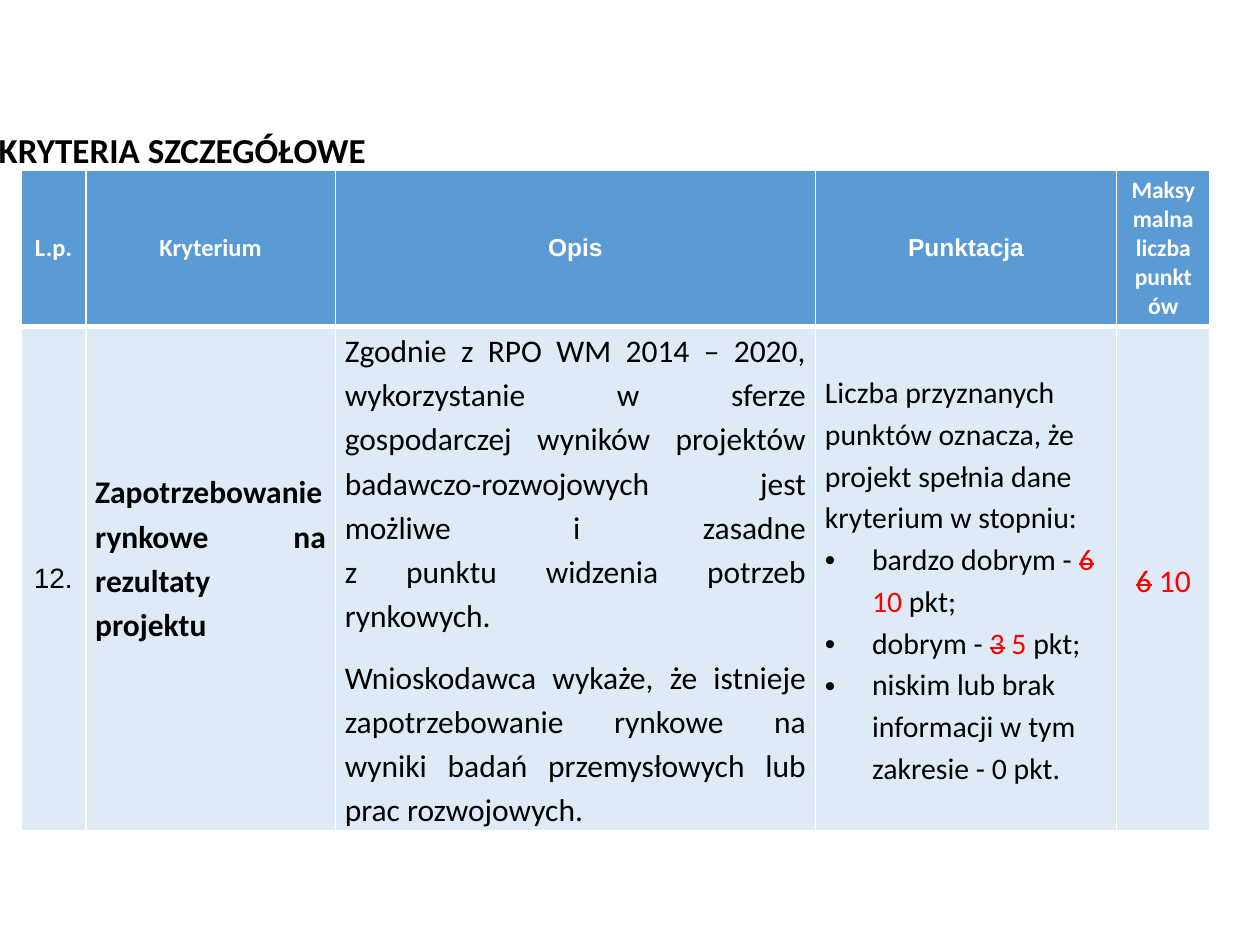
from dataclasses import dataclass
from typing import Optional

from pptx import Presentation
from pptx.dml.color import RGBColor
from pptx.enum.text import MSO_ANCHOR as Anchor, PP_ALIGN as Align
from pptx.oxml.ns import qn
from pptx.util import Cm, Pt
from lxml.etree import SubElement

WHITE, BLACK, RED = "FFFFFF", "000000", "FF0000"
HEADER_FILL, BODY_FILL = "5B9BD5", "DEEBF7"
COLUMN_WIDTHS = (1.3, 5.03, 9.68, 6.07, 1.88)
ROW_HEIGHTS = (3.15, 9.96)
SIDES = ("L", "R", "T", "B")


@dataclass
class Span:
    text: str
    color: str = BLACK
    strike: bool = False


@dataclass
class Para:
    spans: list[Span]
    align: Optional[Align] = None
    after: float = 0
    bullet: bool = False


@dataclass
class Entry:
    paras: list[Para]
    size: float
    font: str = "Calibri"
    bold: bool = False
    spacing: Optional[float] = 1.15
    margins: Optional[tuple[float, float, float, float]] = (0.19, 0, 0.19, 0)


def rgb(color: str) -> RGBColor:
    return RGBColor.from_string(color)


def header(text: str, size: float = 14, font: str = "Calibri") -> Entry:
    return Entry([Para([Span(text, WHITE)], Align.CENTER)], size, font, True, None, None)


def plain(text: str, align: Optional[Align] = None, after: float = 0) -> Para:
    return Para([Span(text)], align, after)


def score(label: str, old: str, new: str) -> Para:
    """Bullet with the old score struck out before the new one."""
    return Para([Span(label + " - "), Span(old, RED, True), Span(" "),
                 Span(new, RED), Span(" pkt;")], bullet=True)


HEADERS = [
    header("L.p."),
    header("Kryterium"),
    header("Opis", font="Arial"),
    header("Punktacja", font="Arial"),
    header("Maksymalna liczba punktów", 13.5),
]
CRITERION = [
    Entry([plain("12.")], 16, "Arial", spacing=None, margins=None),
    Entry([plain("Zapotrzebowanie rynkowe na rezultaty projektu", Align.JUSTIFY)],
          18, bold=True, margins=(0.19, 0, 0.19, 0.89)),
    Entry([
        plain("Zgodnie z RPO WM 2014 – 2020, wykorzystanie w sferze gospodarczej "
              "wyników projektów badawczo-rozwojowych jest możliwe i zasadne\v"
              "z punktu widzenia potrzeb rynkowych.", Align.JUSTIFY, 10),
        plain("Wnioskodawca wykaże, że istnieje zapotrzebowanie rynkowe na wyniki "
              "badań przemysłowych lub prac rozwojowych.", Align.JUSTIFY, 10),
    ], 18),
    Entry([
        plain("Liczba przyznanych punktów oznacza, że projekt spełnia dane "
              "kryterium w stopniu:"),
        score("bardzo dobrym", "6", "10"),
        score("dobrym", "3", "5"),
        Para([Span("niskim lub brak informacji w tym zakresie - 0 pkt.")], bullet=True),
    ], 17),
    Entry([Para([Span("6", RED, True), Span(" 10", RED)], Align.CENTER, 10)], 18),
]


def add_bullet(paragraph) -> None:
    properties = paragraph._p.get_or_add_pPr()
    properties.set("marL", str(Cm(0.95)))
    properties.set("indent", str(-Cm(0.95)))
    SubElement(properties, qn("a:buFont")).set("typeface", "Arial")
    SubElement(properties, qn("a:buChar")).set("char", "•")


def write_para(paragraph, para: Para, entry: Entry) -> None:
    if para.bullet:
        add_bullet(paragraph)
    if para.align is not None:
        paragraph.alignment = para.align
    if entry.spacing:
        paragraph.line_spacing = entry.spacing
    if para.after:
        paragraph.space_after = Pt(para.after)
    if len(para.spans) == 1:
        paragraph.text = para.spans[0].text
        pairs = [(run, para.spans[0]) for run in paragraph.runs]
    else:
        pairs = [(paragraph.add_run(), span) for span in para.spans]
        for run, span in pairs:
            run.text = span.text
    for run, span in pairs:
        run.font.name = entry.font
        run.font.size = Pt(entry.size)
        run.font.bold = entry.bold
        run.font.color.rgb = rgb(span.color)
        if span.strike:
            run._r.get_or_add_rPr().set("strike", "sngStrike")


def add_borders(cell, bottom: float) -> None:
    properties = cell._tc.get_or_add_tcPr()
    for side in SIDES:
        width = bottom if side == "B" else 1
        line = SubElement(properties, qn(f"a:ln{side}"), w=str(Pt(width)))
        fill = SubElement(line, qn("a:solidFill"))
        SubElement(fill, qn("a:srgbClr"), val=WHITE)


def fill_cell(cell, entry: Entry, fill: str, bottom: float) -> None:
    add_borders(cell, bottom)
    cell.fill.solid()
    cell.fill.fore_color.rgb = rgb(fill)
    cell.vertical_anchor = Anchor.MIDDLE
    if entry.margins:
        (cell.margin_left, cell.margin_top,
         cell.margin_right, cell.margin_bottom) = map(Cm, entry.margins)
    for index, para in enumerate(entry.paras):
        frame = cell.text_frame
        write_para(frame.add_paragraph() if index else frame.paragraphs[0], para, entry)


def add_title(page, text: str) -> None:
    title = page.shapes.title
    title.left, title.top, title.width, title.height = map(Cm, (-0.28, 1.02, 23.65, 4.09))
    frame = title.text_frame
    frame.text = text
    frame.word_wrap = True
    frame.vertical_anchor = Anchor.MIDDLE
    para = frame.paragraphs[0]
    para.alignment = Align.LEFT
    para.line_spacing = 0.9
    font = para.runs[0].font
    font.name, font.size, font.bold = "Calibri", Pt(20), True
    font.color.rgb = rgb(BLACK)


def add_criteria_table(page) -> None:
    table = page.shapes.add_table(
        len(ROW_HEIGHTS), len(COLUMN_WIDTHS), Cm(0.43), Cm(3.43),
        Cm(sum(COLUMN_WIDTHS)), Cm(sum(ROW_HEIGHTS))).table
    for column, width in zip(table.columns, COLUMN_WIDTHS):
        column.width = Cm(width)
    for row, height in zip(table.rows, ROW_HEIGHTS):
        row.height = Cm(height)
    rows = ((HEADERS, HEADER_FILL, 3), (CRITERION, BODY_FILL, 1))
    for row, (entries, fill, bottom) in zip(table.rows, rows):
        for cell, entry in zip(row.cells, entries):
            fill_cell(cell, entry, fill, bottom)


def main() -> None:
    deck = Presentation()
    deck.slide_width, deck.slide_height = Cm(25.4), Cm(19.05)
    page = deck.slides.add_slide(deck.slide_layouts[5])
    add_title(page, "KRYTERIA SZCZEGÓŁOWE")
    add_criteria_table(page)
    deck.save("out.pptx")


if __name__ == "__main__":
    main()
